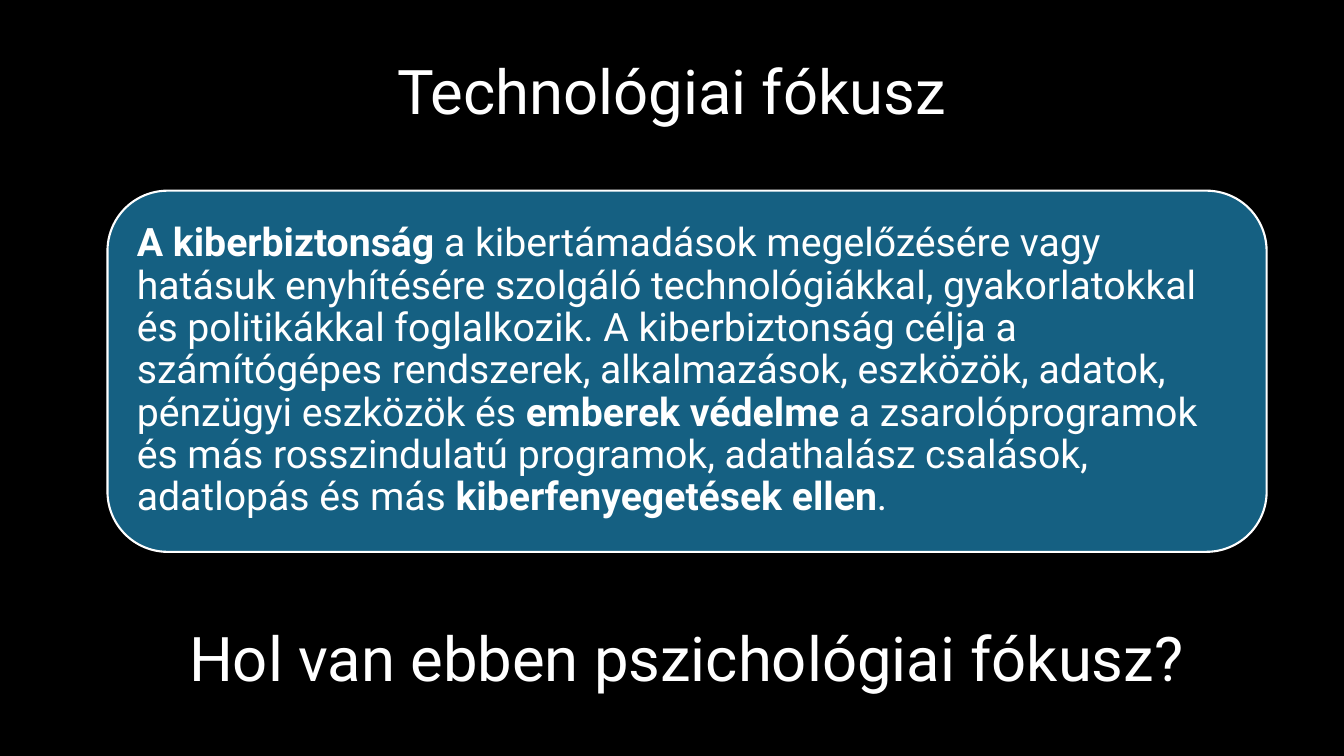
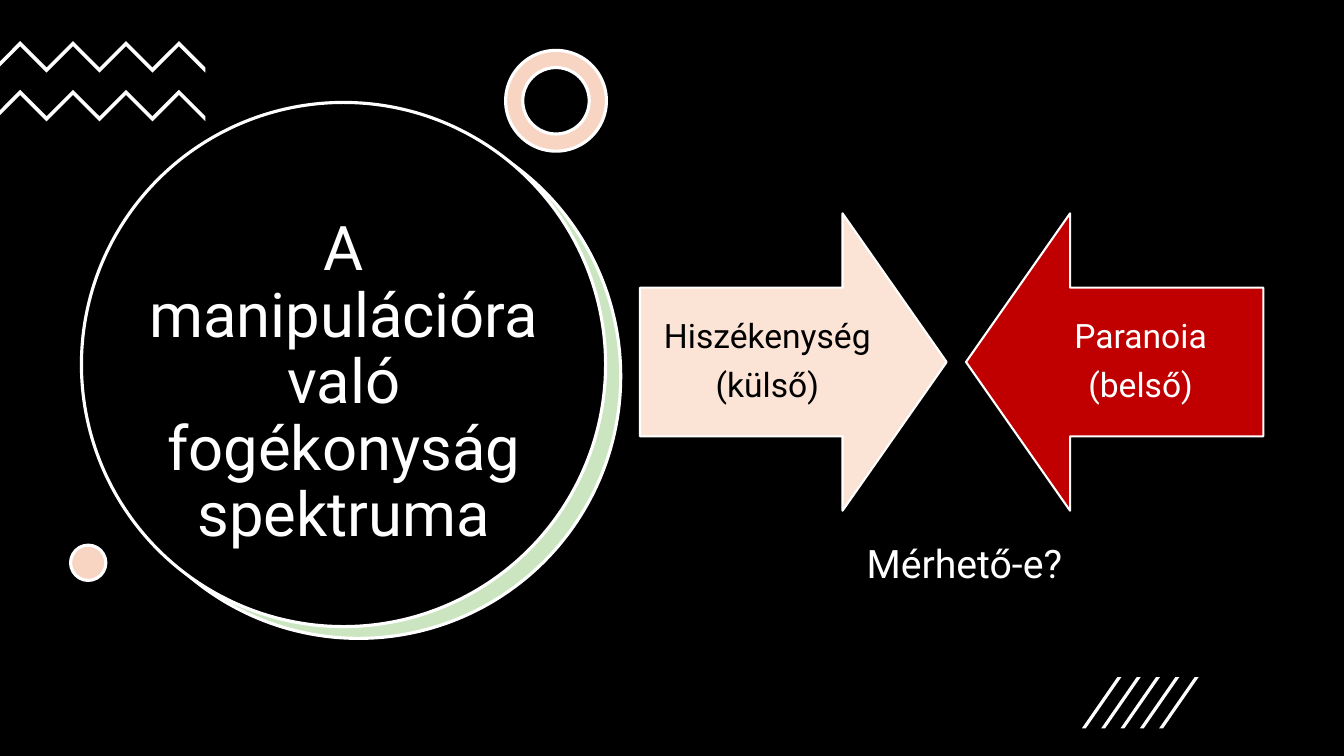
import pptx
import pptx.dml.color
import pptx.enum.shapes
import pptx.enum.text
import pptx.util

COLUMNS, ROWS = 160, 90
CELL = pptx.util.Pt(6)
FONT = "Roboto"
BLACK, WHITE = "000000", "FFFFFF"
BLUE, RED = "156082", "C00000"
GREEN, PEACH, PALE_PEACH = "CAE5C0", "F8D4C2", "FBE3D6"
TITLE_SIZE, BODY_SIZE, ARROW_SIZE = 44, 28, 24
SHAPES = pptx.enum.shapes.MSO_SHAPE
LEFT = pptx.enum.text.PP_ALIGN.LEFT
CENTER = pptx.enum.text.PP_ALIGN.CENTER
MIDDLE = pptx.enum.text.MSO_ANCHOR.MIDDLE
TOP = pptx.enum.text.MSO_ANCHOR.TOP

DEFINITION = [
    "A kiberbiztonság ",
    "a kibertámadások megelőzésére vagy hatásuk enyhítésére szolgáló technológiákkal, "
    "gyakorlatokkal és politikákkal foglalkozik. A kiberbiztonság célja a számítógépes "
    "rendszerek, alkalmazások, eszközök, adatok, pénzügyi eszközök és ",
    "emberek védelme",
    " a zsarolóprogramok és más rosszindulatú programok, adathalász csalások, "
    "adatlopás és más ",
    "kiberfenyegetések ellen",
    ".",
]


def color(value):
    return pptx.dml.color.RGBColor.from_string(value)


def cells(*counts):
    return [round(count * CELL) for count in counts]


def paint(shape, fill, line=None, width=1.5):
    shape.shadow.inherit = False
    shape.fill.solid()
    shape.fill.fore_color.rgb = color(fill)
    if line:
        shape.line.color.rgb = color(line)
        shape.line.width = pptx.util.Pt(width)
    else:
        shape.line.fill.background()


def format_text(shape, size, ink=WHITE, align=CENTER, anchor=MIDDLE,
                margins=(1.2, 0.6), spacing=0.9, after=0):
    frame = shape.text_frame
    frame.word_wrap = True
    frame.auto_size = pptx.enum.text.MSO_AUTO_SIZE.NONE
    frame.vertical_anchor = anchor
    side, edge = cells(*margins)
    frame.margin_left = frame.margin_right = side
    frame.margin_top = frame.margin_bottom = edge
    for para in frame.paragraphs:
        para.alignment = align
        para.line_spacing = spacing
        para.space_before = pptx.util.Pt(0)
        para.space_after = pptx.util.Pt(after)
        for span in para.runs:
            span.font.name = FONT
            span.font.size = pptx.util.Pt(size)
            span.font.color.rgb = color(ink)


def add_page(deck, title, area):
    page = deck.slides.add_slide(deck.slide_layouts[5])
    page.background.fill.solid()
    page.background.fill.fore_color.rgb = color(BLACK)
    heading = page.shapes.title
    heading.left, heading.top, heading.width, heading.height = cells(*area)
    heading.text_frame.text = title
    format_text(heading, TITLE_SIZE)
    return page


def add_label(page, text, area, size, **style):
    box = page.shapes.add_textbox(*cells(*area))
    box.text_frame.text = text
    format_text(box, size, **style)


def add_figure(page, kind, area, fill, line=None, width=1.5, adjustments=()):
    shape = page.shapes.add_shape(kind, *cells(*area))
    paint(shape, fill, line, width)
    for index, value in enumerate(adjustments):
        shape.adjustments[index] = value
    return shape


def add_card(page, pieces, area):
    card = add_figure(page, SHAPES.ROUNDED_RECTANGLE, area, BLUE, WHITE)
    para = card.text_frame.paragraphs[0]
    for index, piece in enumerate(pieces):
        span = para.add_run()
        span.text = piece
        span.font.bold = index % 2 == 0
    format_text(card, BODY_SIZE, align=LEFT, margins=(1.4, 1.4), after=9)


def add_arrow(page, kind, text, area, fill, ink):
    arrow = add_figure(page, kind, area, fill, WHITE, adjustments=(0.5, 0.35))
    arrow.text_frame.text = text
    format_text(arrow, ARROW_SIZE, ink, margins=(2.3, 2.3), after=9)


def add_disc(page, kind, left, top, size, fill, adjustments=()):
    add_figure(page, kind, (left, top, size, size), fill, WHITE, 2.25, adjustments)


def add_zigzag(page, top, step=3.15, thickness=0.6):
    ridge = [(0, top + 2.4)]
    ridge += [(2.4 + step * turn, top + step * (turn % 2)) for turn in range(8)]
    underside = [(x, y + thickness) for x, y in reversed(ridge)]
    points = [cells(*point) for point in ridge + underside]
    builder = page.shapes.build_freeform(*points[0])
    builder.add_line_segments(points[1:], close=True)
    paint(builder.convert_to_shape(), WHITE)


def build_technology(deck):
    page = add_page(deck, "Technológiai fókusz", (11, 2.6, 138, 17.4))
    add_card(page, DEFINITION, (12.8, 22.7, 138, 43))
    add_label(page, "Hol van ebben pszichológiai fókusz?",
              (12.8, 70, 138, 17.4), TITLE_SIZE)


def build_spectrum(deck):
    page = add_page(deck, "A manipulációra való fogékonyság spektruma",
                    (14.5, 24.6, 52.9, 42.2))
    add_disc(page, SHAPES.OVAL, 11.5, 13.6, 62.4, GREEN)
    add_disc(page, SHAPES.OVAL, 9.7, 12.2, 62.4, BLACK)
    page.shapes.element.append(page.shapes.title.element)
    for top in (4.9, 10.7):
        add_zigzag(page, top)
    add_disc(page, SHAPES.DONUT, 60.2, 6, 12, PEACH, (0.17,))
    add_disc(page, SHAPES.OVAL, 8.4, 64.9, 4.2, PEACH)
    add_arrow(page, SHAPES.RIGHT_ARROW, "Hiszékenység\n(külső)",
              (76.2, 25.4, 36.5, 35.4), PALE_PEACH, BLACK)
    add_arrow(page, SHAPES.LEFT_ARROW, "Paranoia\n(belső)",
              (115, 25.4, 35.4, 35.4), RED, WHITE)
    for index in range(5):
        add_figure(page, SHAPES.PARALLELOGRAM,
                   (128.8 + 2.3 * index, 80.6, 4.7, 6.1), WHITE, adjustments=(0.9,))
    add_label(page, "Mérhető-e?", (102, 63.6, 31.3, 6.8), BODY_SIZE,
              align=LEFT, anchor=TOP, spacing=1)


def main():
    deck = pptx.Presentation()
    deck.slide_width, deck.slide_height = cells(COLUMNS, ROWS)
    build_technology(deck)
    build_spectrum(deck)
    deck.save("out.pptx")


if __name__ == "__main__":
    main()
